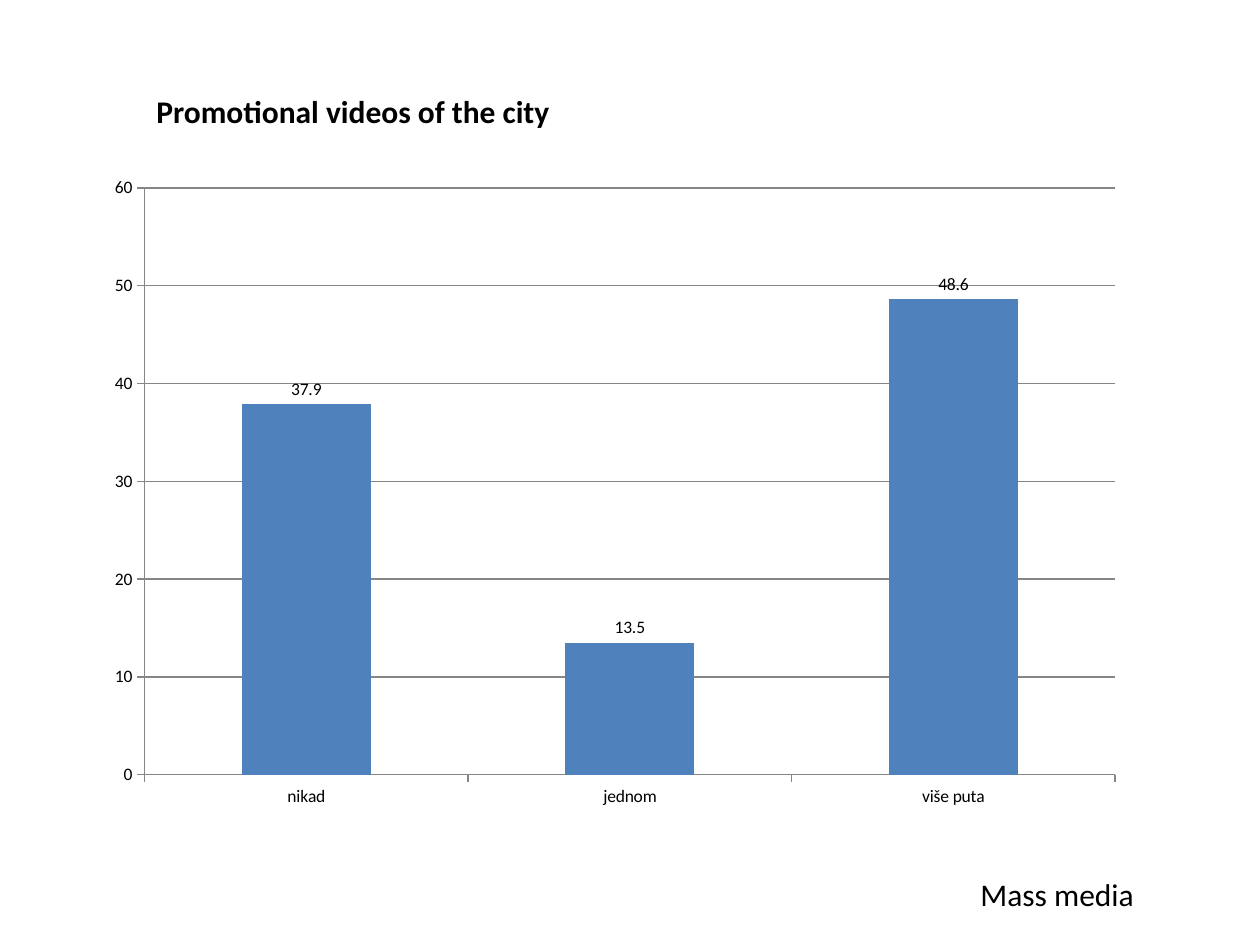
from pptx import Presentation
from pptx import util as u
from pptx.chart.data import CategoryChartData
from pptx.dml.color import RGBColor
from pptx.enum import chart as ch
from pptx.enum import text

BLACK = RGBColor(0, 0, 0)
GRAY = RGBColor(0x86, 0x86, 0x86)
BLUE = RGBColor(0x4F, 0x81, 0xBD)
FONT = "Calibri"

CAPTIONS = [
    ("Promotional videos of the city", True, (144, 86, 912, 50)),
    ("Mass media", False, (968, 869, 258, 50)),
]
VIEWS = {"nikad": 37.9, "jednom": 13.5, "više puta": 48.6}
CHART_BOX = (94, 165, 1042, 655)
SLIDE_SIZE = (1260, 945)


def px(*lengths):
    return [u.Emu(round(length * 914400 / 126)) for length in lengths]


def style(font, size, bold=False):
    font.name = FONT
    font.size = u.Pt(size)
    font.bold = bold
    font.color.rgb = BLACK


def add_caption(slide, words, bold, box):
    frame = slide.shapes.add_textbox(*px(*box)).text_frame
    frame.word_wrap = True
    frame.auto_size = text.MSO_AUTO_SIZE.SHAPE_TO_FIT_TEXT
    run = frame.paragraphs[0].add_run()
    run.text = words
    style(run.font, 18, bold)


def add_views_chart(slide):
    data = CategoryChartData(number_format="General")
    data.categories = list(VIEWS)
    data.add_series("Series 1", list(VIEWS.values()))
    chart = slide.shapes.add_chart(
        ch.XL_CHART_TYPE.COLUMN_CLUSTERED, *px(*CHART_BOX), data).chart
    style(chart.font, 10)
    chart.has_title = False
    chart.has_legend = False

    for axis in (chart.category_axis, chart.value_axis):
        axis.major_tick_mark = ch.XL_TICK_MARK.OUTSIDE
        axis.minor_tick_mark = ch.XL_TICK_MARK.NONE
        axis.format.line.color.rgb = GRAY
        axis.format.line.width = u.Pt(0.75)
    values = chart.value_axis
    values.minimum_scale, values.maximum_scale, values.major_unit = 0, 60, 10
    values.has_major_gridlines = True
    values.major_gridlines.format.line.color.rgb = GRAY
    values.major_gridlines.format.line.width = u.Pt(0.75)

    plot = chart.plots[0]
    plot.vary_by_categories = False
    plot.gap_width = 150
    columns = plot.series[0]
    columns.format.fill.solid()
    columns.format.fill.fore_color.rgb = BLUE
    labels = columns.data_labels
    labels.show_value = True
    labels.position = ch.XL_LABEL_POSITION.OUTSIDE_END
    style(labels.font, 10)


def main():
    """Build the slide on promotional videos of the city."""
    deck = Presentation()
    deck.slide_width, deck.slide_height = px(*SLIDE_SIZE)
    slide = deck.slides.add_slide(deck.slide_layouts[6])
    for caption in CAPTIONS:
        add_caption(slide, *caption)
    add_views_chart(slide)
    deck.save("out.pptx")


if __name__ == "__main__":
    main()
